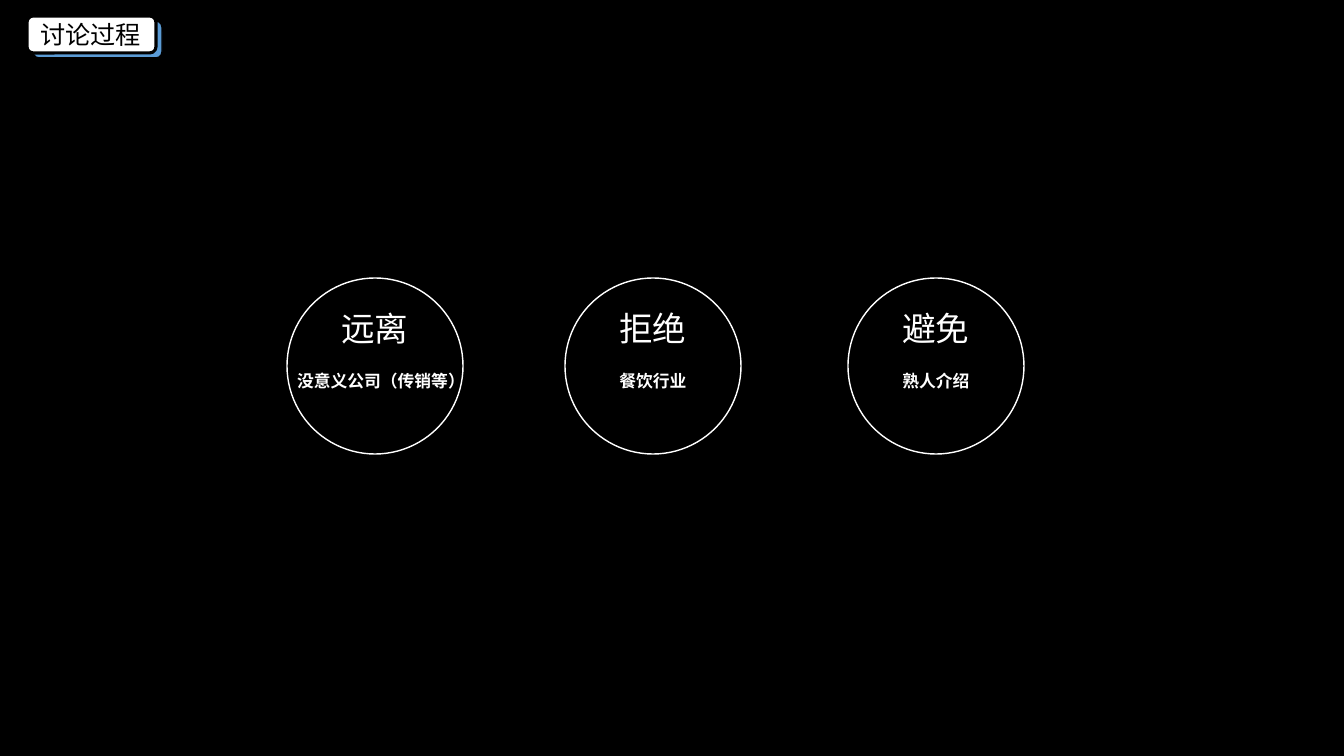
from pptx import Presentation
from pptx.dml.color import RGBColor
from pptx.enum.shapes import MSO_SHAPE
from pptx.enum.text import MSO_ANCHOR, PP_ALIGN
from pptx.util import Pt

TITLE = "讨论过程"
# circle left, heading, caption, caption centre
CIRCLES = [
    (287, "远离", "没意义公司（传销等）", 381),
    (565, "拒绝", "餐饮行业", 653),
    (848, "避免", "熟人介绍", 936),
]
COLORS = {"black": "000000", "white": "FFFFFF", "blue": "5B9BD5"}
FONT = "Calibri"
EMU_PER_PX = 914400 / 100.8
CIRCLE_TOP, CIRCLE_SIZE = 278, 176
HEADING_TOP, HEADING_WIDTH, HEADING_HEIGHT = 303, 88, 50
CAPTION_TOP, CAPTION_WIDTH, CAPTION_HEIGHT = 366, 190, 30


def px(*lengths):
    return [round(length * EMU_PER_PX) for length in lengths]


def color(name):
    return RGBColor.from_string(COLORS[name])


def add_outlined(slide, kind, box, fill, line, width):
    shape = slide.shapes.add_shape(kind, *px(*box))
    shape.shadow.inherit = False
    if fill:
        shape.fill.solid()
        shape.fill.fore_color.rgb = color(fill)
    else:
        shape.fill.background()
    shape.line.color.rgb = color(line)
    shape.line.width = Pt(width)


def write(shape, text, size, text_color, bold=False, align=PP_ALIGN.CENTER):
    frame = shape.text_frame
    frame.text = text
    frame.word_wrap = True
    frame.vertical_anchor = MSO_ANCHOR.TOP
    paragraph = frame.paragraphs[0]
    paragraph.alignment = align
    font = paragraph.runs[0].font
    font.name, font.size, font.bold = FONT, Pt(size), bold
    font.color.rgb = color(text_color)


def add_centred_text(slide, centre, top, width, height, text, size, bold=False):
    box = slide.shapes.add_textbox(*px(centre - width / 2, top, width, height))
    write(box, text, size, "white", bold)


def main():
    presentation = Presentation()
    presentation.slide_width, presentation.slide_height = px(1344, 756)
    slide = presentation.slides.add_slide(presentation.slide_layouts[5])
    slide.background.fill.solid()
    slide.background.fill.fore_color.rgb = color("black")

    tag = MSO_SHAPE.ROUNDED_RECTANGLE
    add_outlined(slide, tag, (33, 21, 129, 37), "blue", "black", 1)
    add_outlined(slide, tag, (27, 16, 129, 37), "white", "black", 2.25)
    title = slide.shapes.title
    title.left, title.top, title.width, title.height = px(30, 14, 129, 40)
    write(title, TITLE, 18, "black", align=PP_ALIGN.LEFT)
    # Bring the title in front of its tag
    title.element.getparent().append(title.element)

    for left, heading, caption, caption_centre in CIRCLES:
        add_outlined(slide, MSO_SHAPE.OVAL,
                     (left, CIRCLE_TOP, CIRCLE_SIZE, CIRCLE_SIZE), None, "white", 1)
        add_centred_text(slide, left + CIRCLE_SIZE / 2, HEADING_TOP,
                         HEADING_WIDTH, HEADING_HEIGHT, heading, 24)
        add_centred_text(slide, caption_centre, CAPTION_TOP,
                         CAPTION_WIDTH, CAPTION_HEIGHT, caption, 12, bold=True)

    presentation.save("out.pptx")


if __name__ == "__main__":
    main()
